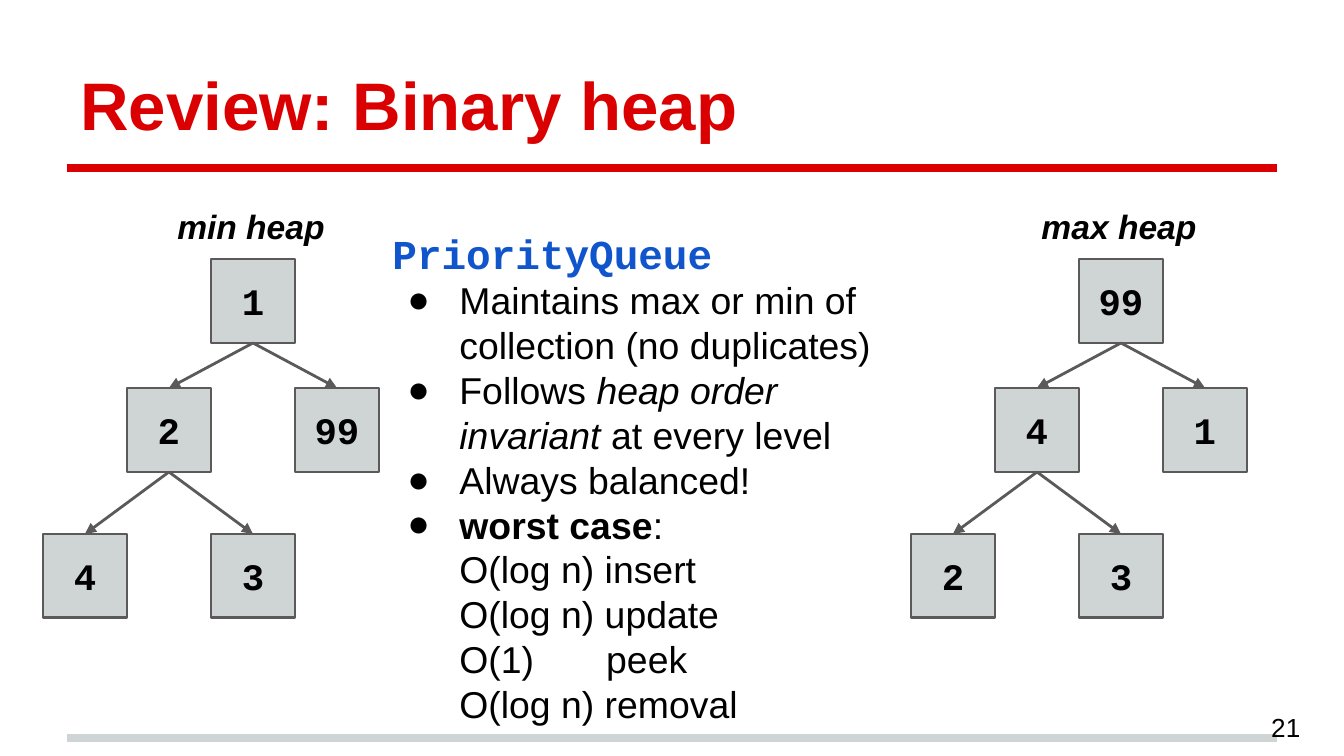
"""Build the binary heap review slide."""
from pptx import Presentation, util as u
from pptx.dml.color import RGBColor
from pptx.enum import shapes, text
from pptx.oxml import ns
from lxml import etree

PX = 914400 / 134.4


def px(*values):
    return [u.Emu(round(v * PX)) for v in values]


def write(tf, runs, align=text.PP_ALIGN.LEFT, p=None):
    tf.word_wrap = True
    tf.auto_size = text.MSO_AUTO_SIZE.NONE
    tf.margin_left = tf.margin_top = tf.margin_right = tf.margin_bottom = u.Inches(0.1)
    p = p or tf.paragraphs[0]
    p.alignment = align
    p.space_before = u.Pt(0)
    for words, size, font, color, bold, italic in runs:
        r = p.add_run()
        r.text = words
        r.font.size, r.font.name = u.Pt(size), font
        r.font.bold, r.font.italic = bold, italic
        r.font.color.rgb = RGBColor.from_string(color)
    return p


RED, GRAY, DARK, BLACK, BLUE = "DA0002", "CFD4D4", "5B595A", "000000", "1155CC"
CENTER = text.PP_ALIGN.CENTER

prs = Presentation()
prs.slide_width, prs.slide_height = px(1344, 756)
s = prs.slides.add_slide(prs.slide_layouts[1])
title, body = s.placeholders[0], s.placeholders[1]

for y, color in [(738, GRAY), (168, RED)]:
    c = s.shapes.add_connector(shapes.MSO_CONNECTOR.STRAIGHT, *px(67, y, 1277, y))
    c.line.width = u.Pt(4)
    c.line.color.rgb = RGBColor.from_string(color)
    etree.SubElement(c._element.spPr, ns.qn("a:effectLst"))

title.left, title.top, title.width, title.height = px(67, 31, 1210, 126)
title.text_frame.vertical_anchor = text.MSO_ANCHOR.BOTTOM
write(title.text_frame, [("Review: Binary heap", 36, "Arial", RED, True, False)])

SIDE, ROWS = 84, [259, 388, 534]
SLOTS = [(2, 0), (1, 1), (3, 1), (0, 2), (2, 2)]
EDGES = [(0, 1), (0, 2), (1, 3), (1, 4)]
HEAPS = [("min heap", 43, ["1", "2", "99", "4", "3"]),
         ("max heap", 911, ["99", "4", "1", "2", "3"])]

for name, left, values in HEAPS:
    nodes = []
    for value, (col, row) in zip(values, SLOTS):
        sp = s.shapes.add_shape(shapes.MSO_SHAPE.RECTANGLE,
                                *px(left + col * SIDE, ROWS[row], SIDE, SIDE))
        sp.shadow.inherit = False
        sp.fill.solid()
        sp.fill.fore_color.rgb = RGBColor.from_string(GRAY)
        sp.line.color.rgb = RGBColor.from_string(DARK)
        sp.line.width = u.Pt(1.5)
        sp.text_frame.vertical_anchor = text.MSO_ANCHOR.MIDDLE
        write(sp.text_frame, [(value, 20, "Courier New", BLACK, True, False)], CENTER)
        nodes.append(sp)
    for parent, child in EDGES:
        c = s.shapes.add_connector(shapes.MSO_CONNECTOR.STRAIGHT, 0, 0, 0, 0)
        c.begin_connect(nodes[parent], 2)
        c.end_connect(nodes[child], 0)
        c.line.color.rgb = RGBColor.from_string(DARK)
        c.line.width = u.Pt(1.5)
        etree.SubElement(c.line._get_or_add_ln(), ns.qn("a:tailEnd"), type="triangle")
        etree.SubElement(c._element.spPr, ns.qn("a:effectLst"))
    sp = s.shapes.add_textbox(*px(left + 68, 192, 280, 55))
    write(sp.text_frame, [(name, 18, "Arial", BLACK, True, True)], CENTER)

body.left, body.top, body.width, body.height = px(379, 210, 523, 546)
tf = body.text_frame
tf.vertical_anchor = text.MSO_ANCHOR.TOP
p = write(tf, [("PriorityQueue", 22, "Courier New", BLUE, True, False)])
p.line_spacing = 1.1
pPr = p._p.get_or_add_pPr()
pPr.set("marL", "0")
pPr.set("indent", "0")
etree.SubElement(pPr, ns.qn("a:buNone"))

ITEMS = [
    (True, [("Maintains max or min of collection (no duplicates)", False, False)]),
    (True, [("Follows ", False, False), ("heap order invariant", False, True),
            (" at every level", False, False)]),
    (True, [("Always balanced!", False, False)]),
    (True, [("worst case", True, False), (":", False, False)]),
    (False, [("O(log n) insert", False, False)]),
    (False, [("O(log n) update", False, False)]),
    (False, [("O(1)", False, False), (" ", False, False), ("peek", False, False)]),
    (False, [("O(log n) removal", False, False)]),
]
for bullet, parts in ITEMS:
    runs = [(words, 20, "Arial", BLACK, bold, italic) for words, bold, italic in parts]
    p = write(tf, runs, p=tf.add_paragraph())
    p.line_spacing = u.Pt(24)
    pPr = p._p.get_or_add_pPr()
    pPr.set("marL", str(px(67)[0]))
    pPr.set("indent", str(px(-52 if bullet else 0)[0]))
    if bullet:
        etree.SubElement(pPr, ns.qn("a:buChar"), char="●")
    else:
        etree.SubElement(pPr, ns.qn("a:buNone"))
    for r in p.runs:
        if r.text == " ":
            r.font._element.set("spc", "3300")

sp = s.shapes.add_textbox(*px(1258, 698, 81, 58))
sp.text_frame.vertical_anchor = text.MSO_ANCHOR.MIDDLE
write(sp.text_frame, [("21", 14, "Arial", BLACK, False, False)])

prs.save("out.pptx")
